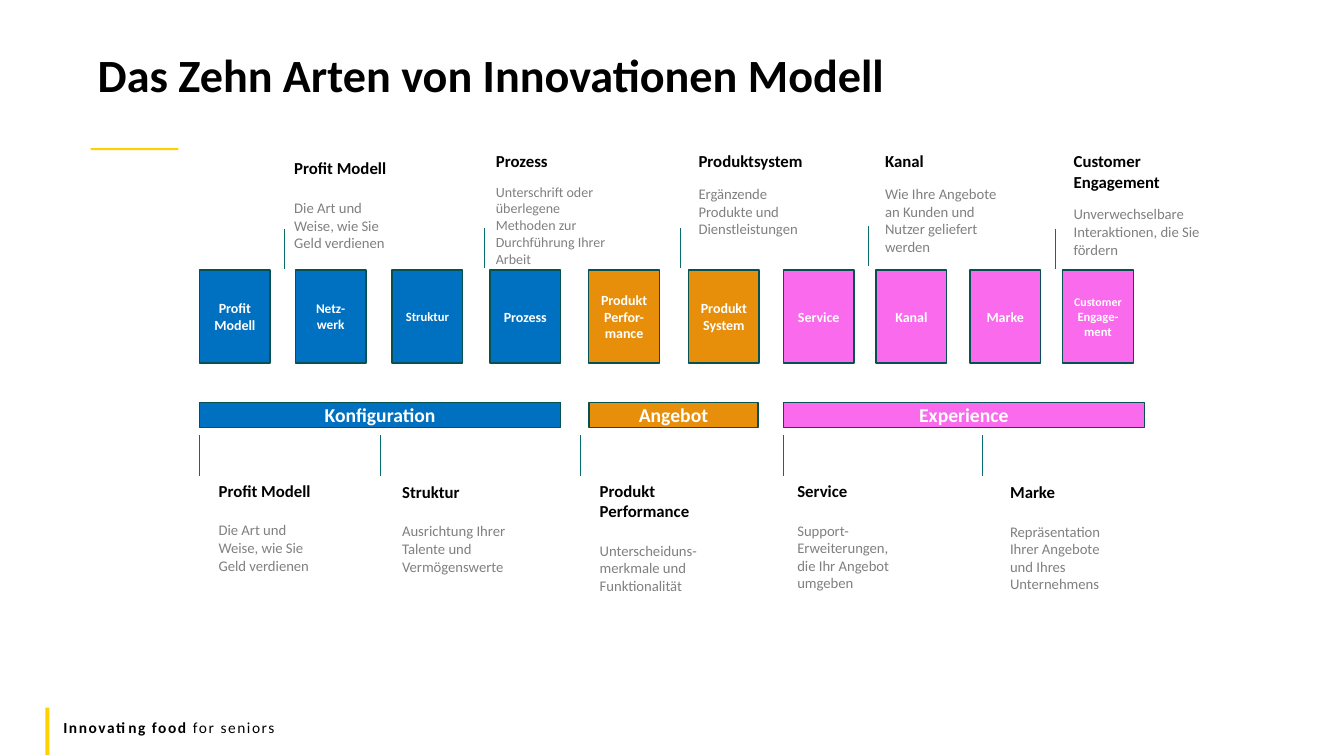
from pptx import Presentation
from pptx.dml.color import RGBColor
from pptx.enum.shapes import MSO_CONNECTOR, MSO_SHAPE
from pptx.enum.text import MSO_ANCHOR, MSO_AUTO_SIZE, PP_ALIGN
from pptx.oxml.ns import qn
from pptx.util import Pt
from lxml.etree import SubElement

PX = 9144
HUES = {
    "blue": "0070C0", "orange": "E78E0B", "pink": "FA6AEC",
    "edge": "065151", "stem": "086D6E", "gold": "FFD100",
    "black": "000000", "grey": "808080", "white": "FFFFFF",
}

TILES = [
    (0, "blue", [("Profit", 10), ("Modell", 10)]),
    (95, "blue", [("Netz-", 9.5), ("werk", 9.5)]),
    (191, "blue", [("Struktur", 9)]),
    (288, "blue", [("Prozess", 10)]),
    (386, "orange", [("Produkt Perfor-", 10), ("mance", 10)]),
    (485, "orange", [("Produkt", 10), ("System", 10)]),
    (579, "pink", [("Service", 10)]),
    (671, "pink", [("Kanal", 10)]),
    (764, "pink", [("Marke", 10)]),
    (856, "pink", [("Customer", 8.5), ("Engage-", 9), ("ment", 9)]),
]
BANDS = [
    (0, 358, "blue", "Konfiguration"),
    (386, 168, "orange", "Angebot"),
    (579, 358, "pink", "Experience"),
]
PROFIT = "Die Art und Weise, wie Sie Geld verdienen"
UPPER = [
    ((282, 152, 117, 104), "Profit Modell", PROFIT, 14.6, 10.5),
    ((482, 145, 132, 126), "Prozess",
     "Unterschrift oder überlegene Methoden zur Durchführung Ihrer Arbeit", 8.5, 10),
    ((683, 145, 129, 97), "Produktsystem",
     "Ergänzende Produkte und Dienstleistungen", 9.8, 10.5),
    ((868, 145, 138, 114), "Kanal",
     "Wie Ihre Angebote an Kunden und Nutzer geliefert werden", 9.8, 10.5),
    ((1055, 145, 149, 117), "Customer Engagement",
     "Unverwechselbare Interaktionen, die Sie fördern", 9.8, 10.5),
]
LOWER = [
    ((207, 472, 117, 104), "Profit Modell", PROFIT, 14.6, 10.5),
    ((389, 473, 133, 104), "Struktur",
     "Ausrichtung Ihrer Talente und Vermögenswerte", 14.6, 10.5),
    ((585, 472, 120, 124), "Produkt Performance",
     "Unterscheiduns-merkmale und Funktionalität", 14.6, 10.5),
    ((781, 472, 117, 121), "Service",
     "Support-Erweiterungen, die Ihr Angebot umgeben", 14.6, 10.5),
    ((992, 473, 124, 121), "Marke",
     "Repräsentation Ihrer Angebote und Ihres Unternehmens", 14.6, 10.5),
]
STEMS = [
    (282, 227), (480, 226), (675, 226), (861, 224), (1047, 227),
    (198, 432), (377, 432), (576, 432), (777, 432), (974, 432),
]


def scale(box):
    return [n * PX for n in box]


def apply(item, values):
    for name, value in values.items():
        setattr(item, name, value)


def color(hue):
    return RGBColor.from_string(HUES[hue])


def write(para, text, size, hue, bold=True):
    run = para.add_run()
    run.text = text
    apply(run.font, {"name": "Calibri", "size": Pt(size), "bold": bold})
    run.font.color.rgb = color(hue)
    return run


def add_rect(slide, box, hue, edge=None):
    rect = slide.shapes.add_shape(MSO_SHAPE.RECTANGLE, *scale(box))
    rect.shadow.inherit = False
    rect.fill.solid()
    rect.fill.fore_color.rgb = color(hue)
    if edge:
        rect.line.color.rgb = color(edge)
        rect.line.width = Pt(1)
    else:
        rect.line.fill.background()
    return rect


def add_label(slide, box, hue, lines):
    frame = add_rect(slide, box, hue, "edge").text_frame
    apply(frame, {"word_wrap": True, "vertical_anchor": MSO_ANCHOR.MIDDLE})
    for i, (text, size) in enumerate(lines):
        para = frame.add_paragraph() if i else frame.paragraphs[0]
        para.alignment = PP_ALIGN.CENTER
        write(para, text, size, "white")


def add_text(slide, box, fit=MSO_AUTO_SIZE.SHAPE_TO_FIT_TEXT):
    frame = slide.shapes.add_textbox(*scale(box)).text_frame
    apply(frame, {"word_wrap": True, "auto_size": fit})
    return frame


def add_title(slide, box):
    left, top, wide, high = box
    add_rect(slide, (left + 3, top + 100, 87, 2), "gold")
    para = add_text(slide, box, MSO_AUTO_SIZE.NONE).paragraphs[0]
    para.line_spacing = 0.9
    write(para, "Das Zehn Arten von Innovationen Modell", 33, "black")


def add_footer(slide, box):
    left, top, wide, high = box
    add_rect(slide, (left, top, 4, high), "gold")
    para = add_text(slide, (left + 8, top + 5, wide - 8, 29)).paragraphs[0]
    for text, bold in (("Innovating food ", True), ("for seniors", False)):
        run = write(para, text, 11, "black", bold)
        run.font._element.set("spc", "110")


def add_tiles(slide, box):
    left, top, wide, high = box
    for x, hue, lines in TILES:
        add_label(slide, (left + x, top, 70, high), hue, lines)


def add_bands(slide, box):
    left, top, wide, high = box
    for x, span, hue, text in BANDS:
        add_label(slide, (left + x, top, span, high), hue, [(text, 14)])


def add_stem(slide, x, y):
    ends = scale((x, y, x, y + 40))
    stem = slide.shapes.add_connector(MSO_CONNECTOR.STRAIGHT, *ends)
    stem.line.color.rgb = color("stem")
    stem.line.width = Pt(0.5)
    SubElement(stem._element.spPr, qn("a:effectLst"))


def add_note(slide, box, head, body, gap, size):
    frame = add_text(slide, box)
    write(frame.paragraphs[0], head, 12, "black")
    para = frame.add_paragraph()
    para.space_before = Pt(gap)
    write(para, body, size, "grey", False)


def main():
    deck = Presentation()
    apply(deck, {"slide_width": 1333 * PX, "slide_height": 750 * PX})
    slide = deck.slides.add_slide(deck.slide_layouts[6])
    add_title(slide, (87, 47, 1159, 64))
    add_footer(slide, (45, 702, 1208, 47))
    add_tiles(slide, (198, 268, 926, 92))
    add_bands(slide, (198, 399, 937, 25))
    for x, y in STEMS:
        add_stem(slide, x, y)
    for note in UPPER + LOWER:
        add_note(slide, *note)
    deck.save("out.pptx")


if __name__ == "__main__":
    main()
